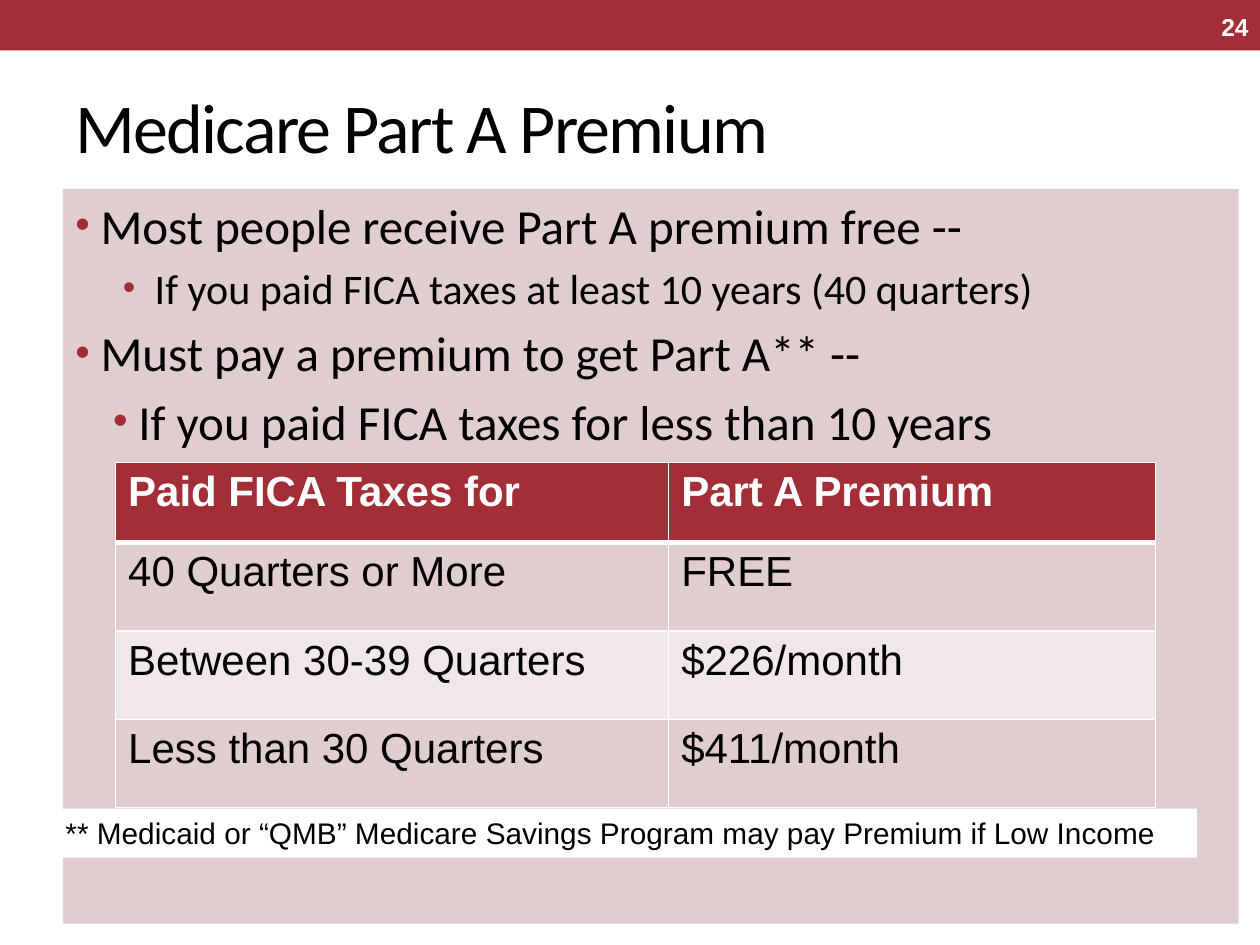
import pptx
import pptx.util
import pptx.dml.color
import pptx.enum.shapes
import pptx.enum.text
import pptx.oxml
import pptx.oxml.ns
from pptx.util import Cm, Pt

RED = pptx.dml.color.RGBColor(0xA3, 0x2E, 0x37)
PINK = pptx.dml.color.RGBColor(0xE0, 0xCD, 0xCE)
PALE_PINK = pptx.dml.color.RGBColor(0xF0, 0xE8, 0xE8)
WHITE = pptx.dml.color.RGBColor(0xFF, 0xFF, 0xFF)
BLACK = pptx.dml.color.RGBColor(0x00, 0x00, 0x00)

NAMESPACE = pptx.oxml.ns.nsdecls("a")
ANCHOR = pptx.enum.text.MSO_ANCHOR
ALIGN = pptx.enum.text.PP_ALIGN

# Text, level, size in points, left margin and hanging indent in cm
BULLETS = [
    ("Most people receive Part A premium free --", 0, 28, 0.51, 0.51),
    ("If you paid FICA taxes at least 10 years (40 quarters)", 1, 24, 1.6, 0.64),
    ("Must pay a premium to get Part A** --", 0, 28, 0.51, 0.51),
    ("If you paid FICA taxes for less than 10 years", 1, 28, 1.27, 0.51),
]
PREMIUMS = [
    ("Paid FICA Taxes for", "Part A Premium"),
    ("40 Quarters or More", "FREE"),
    ("Between 30-39 Quarters", "$226/month"),
    ("Less than 30 Quarters", "$411/month"),
]
FOOTNOTE = "** Medicaid or “QMB” Medicare Savings Program may pay Premium if Low Income"


def format_runs(paragraph, size, color, name="Arial", bold=False):
    for run in paragraph.runs:
        run.font.size = Pt(size)
        run.font.name = name
        run.font.bold = bold
        run.font.color.rgb = color


def place(shape, left, top, width, height):
    shape.left, shape.top = Cm(left), Cm(top)
    shape.width, shape.height = Cm(width), Cm(height)


def add_panel(slide, left, top, width, height, color):
    shape = slide.shapes.add_shape(
        pptx.enum.shapes.MSO_SHAPE.RECTANGLE,
        Cm(left), Cm(top), Cm(width), Cm(height))
    shape.shadow.inherit = False
    shape.fill.solid()
    shape.fill.fore_color.rgb = color
    shape.line.fill.background()
    shape.text_frame.word_wrap = True
    shape.text_frame.vertical_anchor = ANCHOR.TOP
    return shape


def add_title(slide, text):
    title = slide.shapes.title
    place(title, 1.27, 1.47, 22.86, 2.11)
    frame = title.text_frame
    frame.text = text
    frame.auto_size = pptx.enum.text.MSO_AUTO_SIZE.NONE
    frame.vertical_anchor = ANCHOR.MIDDLE
    paragraph = frame.paragraphs[0]
    paragraph.alignment = ALIGN.LEFT
    format_runs(paragraph, 40, BLACK, "Calibri")
    paragraph.runs[0].font._element.set("spc", "-100")


def add_bullet_format(paragraph, margin, hanging):
    properties = paragraph._p.get_or_add_pPr()
    properties.set("marL", str(Cm(margin)))
    properties.set("indent", str(-Cm(hanging)))
    for xml in (
        f'<a:buClr {NAMESPACE}><a:srgbClr val="{RED}"/></a:buClr>',
        f'<a:buSzPct {NAMESPACE} val="85000"/>',
        f'<a:buFont {NAMESPACE} typeface="Arial"/>',
        f'<a:buChar {NAMESPACE} char="•"/>',
    ):
        properties.append(pptx.oxml.parse_xml(xml))


def add_bullets(slide):
    frame = add_panel(slide, 1.27, 3.81, 23.7, 14.81, PINK).text_frame
    for index, (text, level, size, margin, hanging) in enumerate(BULLETS):
        paragraph = frame.add_paragraph() if index else frame.paragraphs[0]
        paragraph.text = text
        paragraph.level = level
        paragraph.alignment = ALIGN.LEFT
        add_bullet_format(paragraph, margin, hanging)
        if index:
            paragraph.space_before = Pt(size * 0.2)
        format_runs(paragraph, size, BLACK, "Calibri")


def add_borders(cell, top, bottom):
    properties = cell._tc.get_or_add_tcPr()
    widths = {"lnL": 1, "lnR": 1, "lnT": top, "lnB": bottom}
    for position, (tag, width) in enumerate(widths.items()):
        properties.insert(position, pptx.oxml.parse_xml(
            f'<a:{tag} {NAMESPACE} w="{Pt(width)}"><a:solidFill>'
            f'<a:srgbClr val="{WHITE}"/></a:solidFill></a:{tag}>'))


def add_premium_table(slide):
    table = slide.shapes.add_table(
        len(PREMIUMS), 2, Cm(2.33), Cm(9.32), Cm(20.96), Cm(6.96)).table
    for column, width in zip(table.columns, (11.15, 9.81)):
        column.width = Cm(width)
    for row_index, texts in enumerate(PREMIUMS):
        header = row_index == 0
        table.rows[row_index].height = Cm(1.62 if header else 1.78)
        fill = RED if header else (PINK if row_index % 2 else PALE_PINK)
        for column_index, text in enumerate(texts):
            cell = table.cell(row_index, column_index)
            cell.text_frame.text = text
            cell.fill.solid()
            cell.fill.fore_color.rgb = fill
            # A heavier rule separates the header from the rows
            add_borders(cell, 3 if row_index == 1 else 1, 3 if header else 1)
            format_runs(cell.text_frame.paragraphs[0], 24,
                        WHITE if header else BLACK, bold=header)


def add_slide_number(slide, number):
    box = slide.shapes.add_textbox(Cm(19.5), Cm(0.03), Cm(5.92), Cm(1.02))
    frame = box.text_frame
    frame.word_wrap = True
    frame.vertical_anchor = ANCHOR.MIDDLE
    frame.text = number
    frame.paragraphs[0].alignment = ALIGN.RIGHT
    format_runs(frame.paragraphs[0], 14, WHITE, bold=True)


def add_footnote(slide):
    frame = add_panel(slide, 1.07, 16.3, 23.06, 0.99, WHITE).text_frame
    frame.text = FOOTNOTE
    frame.paragraphs[0].alignment = ALIGN.LEFT
    format_runs(frame.paragraphs[0], 17, BLACK)


def main():
    presentation = pptx.Presentation()
    presentation.slide_width = Cm(25.4)
    presentation.slide_height = Cm(19.05)
    slide = presentation.slides.add_slide(presentation.slide_layouts[5])

    # Top band, title and content
    add_panel(slide, 0, 0, 25.4, 1.02, RED)
    add_title(slide, "Medicare Part A Premium")
    add_bullets(slide)
    add_slide_number(slide, "24")
    add_premium_table(slide)
    add_footnote(slide)

    presentation.save("out.pptx")


if __name__ == "__main__":
    main()
